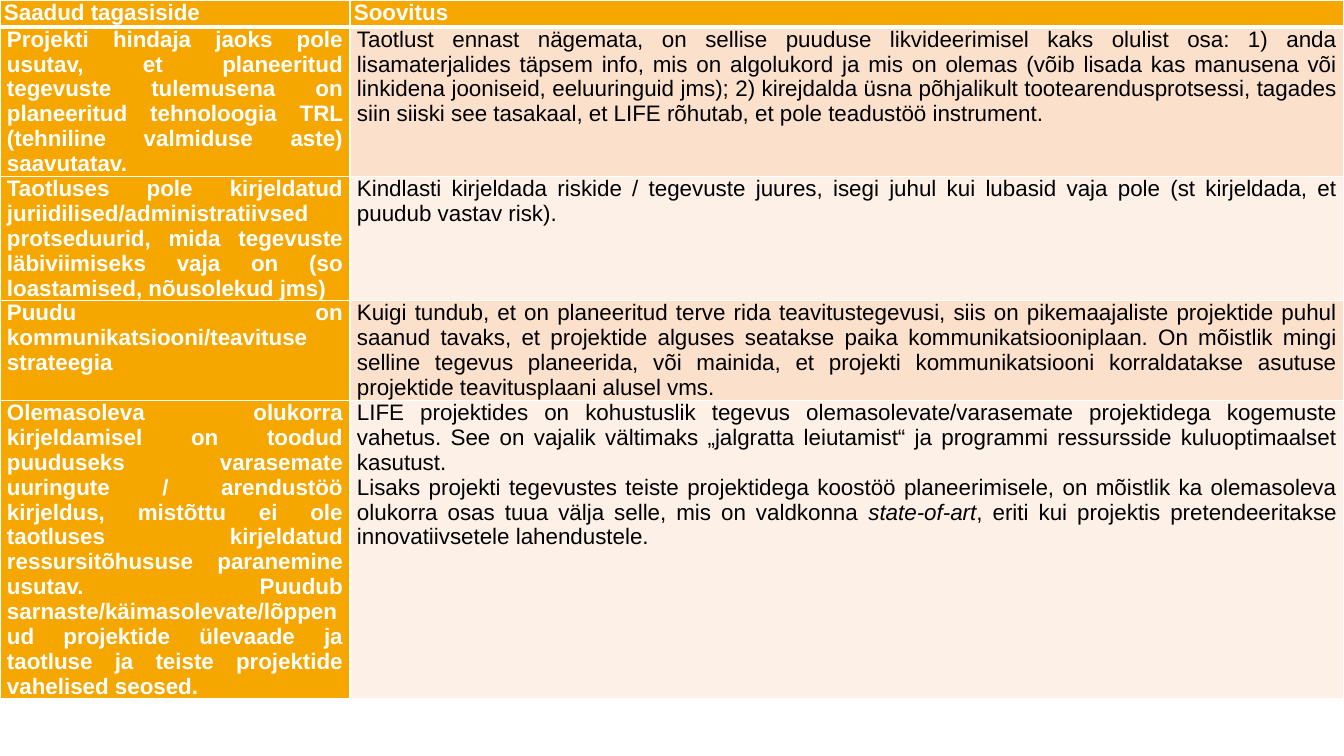
from lxml import etree
from pptx import Presentation
from pptx.dml.color import RGBColor
from pptx.enum.text import PP_ALIGN
from pptx.oxml.ns import qn
from pptx.util import Pt

JUSTIFY = PP_ALIGN.JUSTIFY
EMU_PER_PX = 914400 / 100.8
SLIDE_WIDTH, SLIDE_HEIGHT = 1344, 756
BLANK_LAYOUT = 6

ORANGE, PEACH, CREAM = "F5A700", "FBE1CC", "FDF1E7"
WHITE, BLACK = "FFFFFF", "000000"

COLUMN_WIDTHS = [350, 994]
ROW_HEIGHTS = [27, 55, 99, 82, 192]
FRAME_HEIGHT = 753

HEADINGS = ("Saadud tagasiside", "Soovitus")
FEEDBACK = [
    (
        "Projekti hindaja jaoks pole usutav, et planeeritud tegevuste tulemusena on "
        "planeeritud tehnoloogia TRL (tehniline valmiduse aste) saavutatav.",
        "Taotlust ennast nägemata, on sellise puuduse likvideerimisel kaks olulist osa: "
        "1) anda lisamaterjalides täpsem info, mis on algolukord ja mis on olemas (võib "
        "lisada kas manusena või linkidena jooniseid, eeluuringuid jms); 2) kirejdalda "
        "üsna põhjalikult tootearendusprotsessi, tagades siin siiski see tasakaal, et "
        "LIFE rõhutab, et pole teadustöö instrument.",
    ),
    (
        "Taotluses pole kirjeldatud juriidilised/administratiivsed protseduurid, mida "
        "tegevuste läbiviimiseks vaja on (so loastamised, nõusolekud jms)",
        "Kindlasti kirjeldada riskide / tegevuste juures, isegi juhul kui lubasid vaja "
        "pole (st kirjeldada, et puudub vastav risk).",
    ),
    (
        "Puudu on kommunikatsiooni/teavituse strateegia",
        "Kuigi tundub, et on planeeritud terve rida teavitustegevusi, siis on "
        "pikemaajaliste projektide puhul saanud tavaks, et projektide alguses seatakse "
        "paika kommunikatsiooniplaan. On mõistlik mingi selline tegevus planeerida, või "
        "mainida, et projekti kommunikatsiooni korraldatakse asutuse projektide "
        "teavitusplaani alusel vms.",
    ),
    (
        "Olemasoleva olukorra kirjeldamisel on toodud puuduseks varasemate uuringute / "
        "arendustöö kirjeldus, mistõttu ei ole taotluses kirjeldatud ressursitõhususe "
        "paranemine usutav. Puudub sarnaste/käimasolevate/lõppenud projektide ülevaade "
        "ja taotluse ja teiste projektide vahelised seosed.",
        "LIFE projektides on kohustuslik tegevus olemasolevate/varasemate projektidega "
        "kogemuste vahetus. See on vajalik vältimaks „jalgratta leiutamist“ ja programmi "
        "ressursside kuluoptimaalset kasutust.\n"
        "Lisaks projekti tegevustes teiste projektidega koostöö planeerimisele, on "
        "mõistlik ka olemasoleva olukorra osas tuua välja selle, mis on valdkonna "
        "*state-of-art*, eriti kui projektis pretendeeritakse innovatiivsetele "
        "lahendustele.",
    ),
]


def px(length):
    """Turn whole pixels into EMU."""
    return round(length * EMU_PER_PX)


def color(hex_code):
    """Turn a hex string into a colour."""
    return RGBColor.from_string(hex_code)


def apply(target, formats):
    """Set each attribute named in a dict of format values."""
    for attribute, value in formats.items():
        setattr(target, attribute, value)


class SlideBuilder:
    """Holds the style and the current slide."""

    font_format = {"name": "Arial", "size": Pt(16)}

    def __init__(self, slide):
        """Keep the slide that receives the elements."""
        self.slide = slide

    def table(self, rows, widths, heights, frame_height):
        """Add a plain table and return it."""
        frame = self.slide.shapes.add_table(
            len(rows), len(widths), 0, 0, px(sum(widths)), px(frame_height))
        grid = frame.table
        for column, width in zip(grid.columns, widths):
            column.width = px(width)
        for row, height in zip(grid.rows, heights):
            row.height = px(height)
        frame.height = px(frame_height)
        for row_index, row in enumerate(rows):
            for column_index, wording in enumerate(row):
                self.cell(grid.cell(row_index, column_index), wording, row_index, column_index)
        return grid

    def cell(self, cell, wording, row_index, column_index):
        """Fill, border and write one cell according to its place."""
        is_header = row_index == 0
        is_label = is_header or column_index == 0
        inset = px(4 if is_header else 7)
        apply(cell, {"margin_left": inset, "margin_right": inset,
                     "margin_top": 0, "margin_bottom": 0})
        band = PEACH if row_index % 2 else CREAM
        cell.fill.solid()
        cell.fill.fore_color.rgb = color(ORANGE if is_label else band)
        self.borders(cell, {"L": 1, "R": 1, "T": 3 if row_index == 1 else 1,
                            "B": 3 if is_header else 1})
        self.text(cell.text_frame, wording, is_label)

    def borders(self, cell, widths):
        """Draw white cell borders of the given point widths."""
        properties = cell._tc.get_or_add_tcPr()
        for position, (side, width) in enumerate(widths.items()):
            line = etree.Element(qn(f"a:ln{side}"), w=str(Pt(width)))
            fill = etree.SubElement(line, qn("a:solidFill"))
            etree.SubElement(fill, qn("a:srgbClr"), val=WHITE)
            properties.insert(position, line)

    def text(self, text_frame, wording, is_label):
        """Write justified paragraphs, with italics between asterisks."""
        for index, line in enumerate(wording.split("\n")):
            paragraph = text_frame.add_paragraph() if index else text_frame.paragraphs[0]
            apply(paragraph, {"alignment": JUSTIFY, "space_before": Pt(0)})
            for part, words in enumerate(line.split("*")):
                run = paragraph.add_run()
                run.text = words
                apply(run.font, {**self.font_format, "bold": is_label, "italic": part % 2 == 1})
                run.font.color.rgb = color(WHITE if is_label else BLACK)


def main():
    """Build the feedback slide and save it."""
    presentation = Presentation()
    apply(presentation, {"slide_width": px(SLIDE_WIDTH), "slide_height": px(SLIDE_HEIGHT)})
    layout = presentation.slide_layouts[BLANK_LAYOUT]
    builder = SlideBuilder(presentation.slides.add_slide(layout))
    builder.table([HEADINGS, *FEEDBACK], COLUMN_WIDTHS, ROW_HEIGHTS, FRAME_HEIGHT)
    presentation.save("out.pptx")


if __name__ == "__main__":
    main()
